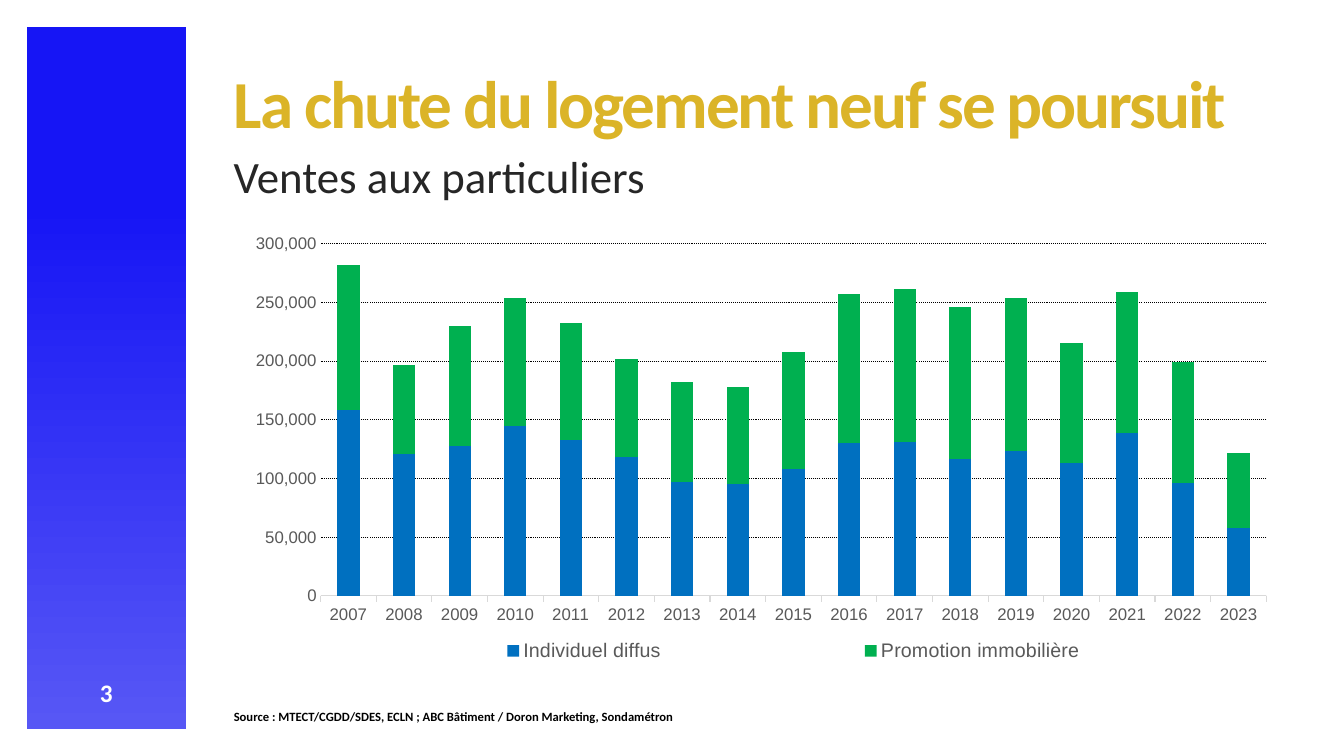
from dataclasses import dataclass

from lxml.etree import SubElement
from pptx import Presentation
from pptx.chart.data import CategoryChartData
from pptx.dml.color import RGBColor
from pptx.enum.chart import XL_CHART_TYPE, XL_LEGEND_POSITION, XL_TICK_MARK
from pptx.enum.dml import MSO_LINE
from pptx.enum.shapes import MSO_SHAPE
from pptx.enum.text import MSO_ANCHOR, PP_ALIGN
from pptx.oxml.ns import qn
from pptx.util import Inches, Pt


@dataclass(frozen=True)
class Theme:
    text_font: str = "Calibri"
    chart_font: str = "Arial"
    white: str = "FFFFFF"
    black: str = "000000"
    gold: str = "DBB428"
    dark: str = "262626"
    gray: str = "595959"
    axis: str = "D9D9D9"
    houses: str = "0070C0"
    developments: str = "00B050"
    band_top: str = "1615F5"
    band_bottom: str = "5757F5"
    title_size: int = 48
    subtitle_size: int = 32
    number_size: int = 18
    source_size: int = 9
    axis_size: int = 12
    legend_size: int = 14


THEME = Theme()

YEARS = [str(year) for year in range(2007, 2024)]
SALES = {
    "Individuel diffus": (
        THEME.houses,
        (158000, 121000, 128000, 145000, 133000, 118000, 97000, 95000, 108000,
         130000, 131000, 117000, 123000, 113000, 139000, 96000, 58000),
    ),
    "Promotion immobilière": (
        THEME.developments,
        (124000, 76000, 102000, 109000, 99000, 84000, 85000, 83000, 100000,
         127000, 130000, 129000, 131000, 102000, 120000, 103000, 64000),
    ),
}


def apply_format(target, values):
    for name, value in values.items():
        setattr(target, name, value)


def format_font(font, name, size, color, bold=False):
    apply_format(font, {"name": name, "size": Pt(size), "bold": bold})
    font.color.rgb = RGBColor.from_string(color)


def add_band(slide, left, top, width, height):
    band = slide.shapes.add_shape(
        MSO_SHAPE.RECTANGLE, Inches(left), Inches(top), Inches(width), Inches(height))
    band.shadow.inherit = False
    band.line.fill.background()
    band.fill.gradient()
    band.fill.gradient_angle = 270
    stops = ((0.25, THEME.band_top), (1, THEME.band_bottom))
    for stop, (position, color) in zip(band.fill.gradient_stops, stops):
        stop.position = position
        stop.color.rgb = RGBColor.from_string(color)


def add_text(slide, text, box, size, color, bold=False,
             alignment=PP_ALIGN.LEFT, line_spacing=0.9, tracking=0):
    shape = slide.shapes.add_textbox(*map(Inches, box))
    apply_format(shape.text_frame, {"word_wrap": True, "vertical_anchor": MSO_ANCHOR.TOP})
    paragraph = shape.text_frame.paragraphs[0]
    apply_format(paragraph, {"alignment": alignment, "line_spacing": line_spacing})
    run = paragraph.add_run()
    run.text = text
    format_font(run.font, THEME.text_font, size, color, bold)
    if tracking:
        run._r.get_or_add_rPr().set("spc", str(tracking))


def set_layout(element, position, bounds, inner=False):
    for layout in element.findall(qn("c:layout")):
        element.remove(layout)
    layout = SubElement(element, qn("c:layout"))
    element.insert(position, layout)
    manual = SubElement(layout, qn("c:manualLayout"))
    settings = {"layoutTarget": "inner"} if inner else {}
    settings.update({"xMode": "edge", "yMode": "edge"})
    settings.update(zip("xywh", bounds))
    for name, value in settings.items():
        SubElement(manual, qn(f"c:{name}")).set("val", str(value))


def format_axes(chart):
    for axis in (chart.category_axis, chart.value_axis):
        format_font(axis.tick_labels.font, THEME.chart_font, THEME.axis_size, THEME.gray)
    years = chart.category_axis
    apply_format(years, {"major_tick_mark": XL_TICK_MARK.OUTSIDE,
                         "minor_tick_mark": XL_TICK_MARK.NONE})
    years.format.line.color.rgb = RGBColor.from_string(THEME.axis)
    years.format.line.width = Pt(0.75)
    sales = chart.value_axis
    apply_format(sales, {
        "minimum_scale": 0,
        "maximum_scale": 300000,
        "major_unit": 50000,
        "major_tick_mark": XL_TICK_MARK.NONE,
        "minor_tick_mark": XL_TICK_MARK.NONE,
        "has_major_gridlines": True,
    })
    apply_format(sales.tick_labels,
                 {"number_format": "#,##0", "number_format_is_linked": False})
    sales.format.line.fill.background()
    grid = sales.major_gridlines.format.line
    grid.color.rgb = RGBColor.from_string(THEME.black)
    apply_format(grid, {"width": Pt(0.75), "dash_style": MSO_LINE.ROUND_DOT})


def add_sales_chart(slide, box):
    data = CategoryChartData(number_format="#,##0")
    data.categories = YEARS
    for name, (_, values) in SALES.items():
        data.add_series(name, values)
    chart = slide.shapes.add_chart(
        XL_CHART_TYPE.COLUMN_STACKED, *map(Inches, box), data).chart
    apply_format(chart, {"has_title": False, "has_legend": True})
    format_font(chart.font, THEME.text_font, 10, THEME.black)
    plot = chart.plots[0]
    apply_format(plot, {"gap_width": 150, "overlap": 100, "vary_by_categories": False})
    for series, (color, _) in zip(plot.series, SALES.values()):
        series.format.fill.solid()
        series.format.fill.fore_color.rgb = RGBColor.from_string(color)
    format_axes(chart)
    legend = chart.legend
    apply_format(legend, {"position": XL_LEGEND_POSITION.BOTTOM, "include_in_layout": False})
    format_font(legend.font, THEME.chart_font, THEME.legend_size, THEME.gray)
    plot_area = chart._chartSpace.chart.plotArea
    set_layout(plot_area, 0, (0.09, 0.05, 0.88, 0.77), inner=True)
    set_layout(legend._element, 1, (0.08, 0.9, 0.9, 0.08))


def main():
    presentation = Presentation()
    apply_format(presentation,
                 {"slide_width": Inches(13.33), "slide_height": Inches(7.5)})
    slide = presentation.slides.add_slide(presentation.slide_layouts[6])
    left, width = 2.22, 10.66
    add_band(slide, 0.27, 0.27, 1.58, 6.96)
    add_text(slide, "3", (0.27, 6.67, 1.57, 0.4), THEME.number_size, THEME.white,
             bold=True, alignment=PP_ALIGN.CENTER, line_spacing=1.0)
    add_text(slide, "La chute du logement neuf se poursuit", (left, 0.65, width, 0.83),
             THEME.title_size, THEME.gold, bold=True, tracking=-150)
    add_text(slide, "Ventes aux particuliers", (left, 1.49, width, 0.5),
             THEME.subtitle_size, THEME.dark)
    add_sales_chart(slide, (left, 2.19, width, 4.54))
    add_text(slide,
             "Source : MTECT/CGDD/SDES, ECLN ; ABC Bâtiment / Doron Marketing, Sondamétron",
             (left, 7, 8.98, 0.24), THEME.source_size, THEME.black, bold=True)
    presentation.save("out.pptx")


if __name__ == "__main__":
    main()
